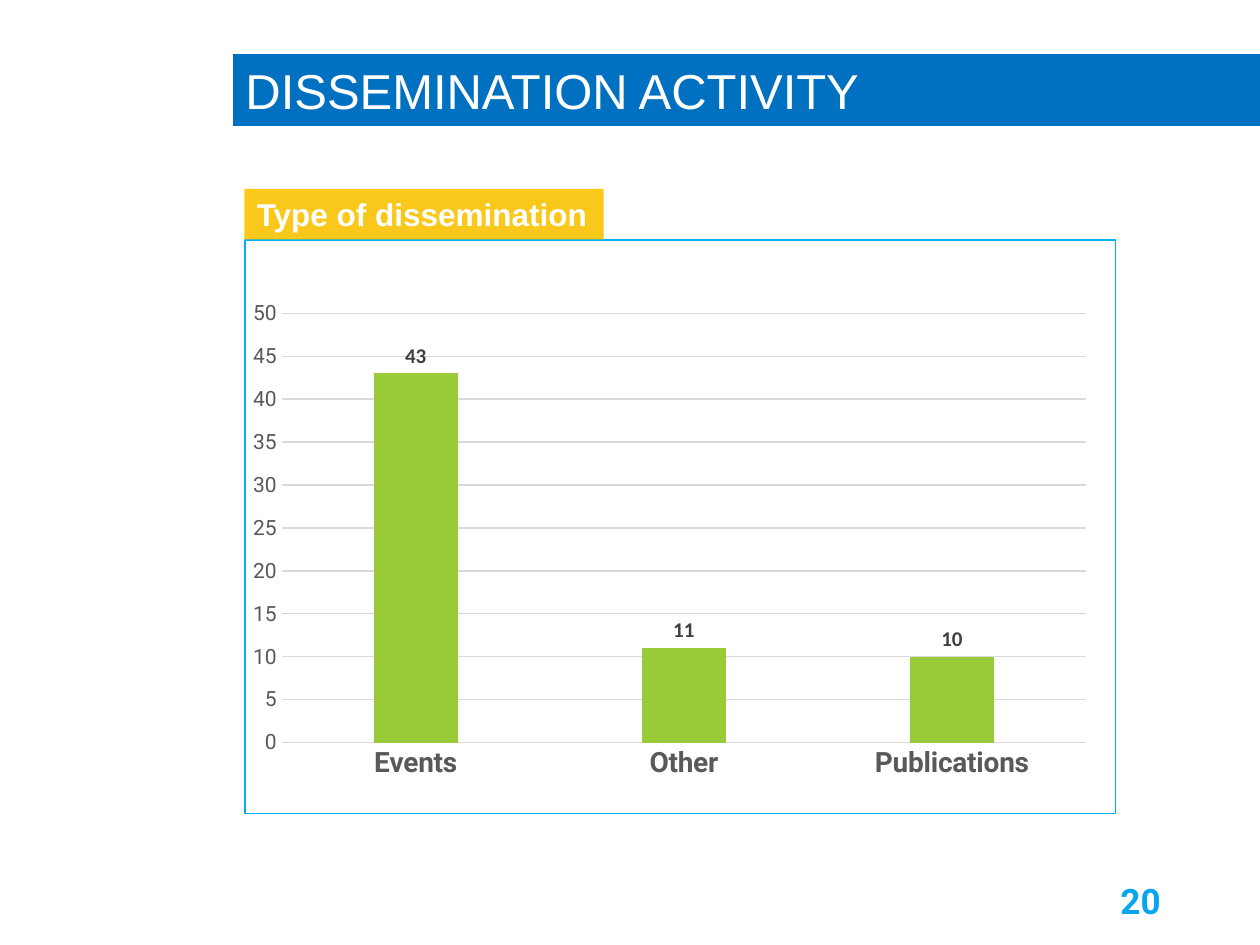
from dataclasses import dataclass

from pptx import Presentation
from pptx.chart.data import CategoryChartData
from pptx.dml.color import RGBColor
from pptx.enum.chart import XL_CHART_TYPE, XL_LABEL_POSITION, XL_TICK_MARK
from pptx.enum.shapes import MSO_SHAPE
from pptx.enum.text import MSO_ANCHOR, PP_ALIGN
from pptx.oxml import parse_xml
from pptx.oxml.ns import nsdecls
from pptx.util import Inches, Pt

COLUMNS = XL_CHART_TYPE.COLUMN_CLUSTERED
OUTSIDE_END = XL_LABEL_POSITION.OUTSIDE_END
NO_TICK = XL_TICK_MARK.NONE
RECTANGLE = MSO_SHAPE.RECTANGLE
TOP, MIDDLE = MSO_ANCHOR.TOP, MSO_ANCHOR.MIDDLE
LEFT, RIGHT = PP_ALIGN.LEFT, PP_ALIGN.RIGHT

SLIDE_WIDTH, SLIDE_HEIGHT = Inches(10), Inches(7.5)
GRID_COLUMNS, GRID_ROWS = 100, 75

COLORS = {
    "title": "0070C0",
    "heading": "FAC81A",
    "white": "FFFFFF",
    "number": "08A5EF",
    "bar": "99CB38",
    "axis": "595959",
    "label": "404040",
    "grid": "D9D9D9",
    "border": "00B0F0",
}


@dataclass(frozen=True)
class Area:
    column: float
    row: float
    columns: float
    rows: float

    def lengths(self) -> tuple[int, int, int, int]:
        cell_width = SLIDE_WIDTH / GRID_COLUMNS
        cell_height = SLIDE_HEIGHT / GRID_ROWS
        return (
            round(self.column * cell_width),
            round(self.row * cell_height),
            round(self.columns * cell_width),
            round(self.rows * cell_height),
        )


@dataclass(frozen=True)
class TextStyle:
    font: str
    size: float
    color: str
    bold: bool = False


@dataclass(frozen=True)
class Label:
    text: str
    area: Area
    style: TextStyle
    fill: str | None = None
    align: PP_ALIGN = LEFT
    anchor: MSO_ANCHOR = TOP
    wrap: bool = True


LABELS = [
    Label("DISSEMINATION ACTIVITY", Area(18.5, 4.3, 83.6, 5.7),
          TextStyle("Arial", 28, "white"), fill="title"),
    Label("Type of dissemination", Area(19.4, 15, 28.5, 4),
          TextStyle("Arial", 18, "white", True), fill="heading", wrap=False),
    Label("20", Area(70.6, 69.5, 22.5, 4),
          TextStyle("Roboto", 20, "number", True), align=RIGHT, anchor=MIDDLE),
]

CHART_AREA = Area(19.4, 19, 69.2, 45.6)
PLOT_SHARES = {"x": 0.042, "y": 0.128, "w": 0.924, "h": 0.749}
ACTIVITIES = {"Events": 43, "Other": 11, "Publications": 10}


def color(name: str) -> RGBColor:
    return RGBColor.from_string(COLORS[name])


def apply_style(font, style: TextStyle) -> None:
    font.name = style.font
    font.size = Pt(style.size)
    font.bold = style.bold
    font.color.rgb = color(style.color)


def add_label(page, label: Label) -> None:
    if label.fill:
        box = page.shapes.add_shape(RECTANGLE, *label.area.lengths())
        box.shadow.inherit = False
        box.fill.solid()
        box.fill.fore_color.rgb = color(label.fill)
        box.line.fill.background()
    else:
        box = page.shapes.add_textbox(*label.area.lengths())
    frame = box.text_frame
    frame.text = label.text
    frame.word_wrap = label.wrap
    frame.vertical_anchor = label.anchor
    para = frame.paragraphs[0]
    para.alignment = label.align
    apply_style(para.runs[0].font, label.style)


def set_line(line, name: str) -> None:
    line.color.rgb = color(name)
    line.width = Pt(0.75)


def set_plot_layout(chart) -> None:
    plot_area = chart.plots[0]._element.getparent()
    for layout in plot_area.findall(f"{{{plot_area.nsmap['c']}}}layout"):
        plot_area.remove(layout)
    modes = "".join(f'<c:{axis}Mode val="edge"/>' for axis in "xy")
    shares = "".join(f'<c:{key} val="{share}"/>' for key, share in PLOT_SHARES.items())
    plot_area.insert(0, parse_xml(
        f'<c:layout {nsdecls("c")}><c:manualLayout><c:layoutTarget val="inner"/>'
        f"{modes}{shares}</c:manualLayout></c:layout>"))


def set_chart_border(chart) -> None:
    space = chart._chartSpace
    frame = parse_xml(
        f'<c:spPr {nsdecls("c", "a")}><a:noFill/><a:ln w="{Pt(0.75)}"><a:solidFill>'
        f'<a:srgbClr val="{COLORS["border"]}"/></a:solidFill></a:ln></c:spPr>')
    space.find(f"{{{space.nsmap['c']}}}chart").addnext(frame)


def add_activity_chart(page) -> None:
    data = CategoryChartData()
    data.categories = list(ACTIVITIES)
    data.add_series("Series 1", list(ACTIVITIES.values()))
    chart = page.shapes.add_chart(COLUMNS, *CHART_AREA.lengths(), data).chart
    chart.has_title = False
    chart.has_legend = False
    chart.font.name = "Roboto"
    chart.font.size = Pt(10)

    plot = chart.plots[0]
    plot.gap_width = 219
    plot.overlap = -27
    plot.vary_by_categories = False
    bars = plot.series[0]
    bars.format.fill.solid()
    bars.format.fill.fore_color.rgb = color("bar")
    labels = bars.data_labels
    labels.show_value = True
    labels.position = OUTSIDE_END
    apply_style(labels.font, TextStyle("Calibri", 12, "label", True))

    names, values = chart.category_axis, chart.value_axis
    for axis, size, bold in ((names, 16, True), (values, 12, False)):
        axis.major_tick_mark = NO_TICK
        axis.minor_tick_mark = NO_TICK
        apply_style(axis.tick_labels.font, TextStyle("Roboto", size, "axis", bold))
    set_line(names.format.line, "grid")
    values.format.line.fill.background()
    values.minimum_scale, values.maximum_scale, values.major_unit = 0, 50, 5
    set_line(values.major_gridlines.format.line, "grid")
    set_plot_layout(chart)
    set_chart_border(chart)


def main() -> None:
    deck = Presentation()
    deck.slide_width, deck.slide_height = SLIDE_WIDTH, SLIDE_HEIGHT
    page = deck.slides.add_slide(deck.slide_layouts[6])
    add_activity_chart(page)
    for label in LABELS:
        add_label(page, label)
    deck.save("out.pptx")


if __name__ == "__main__":
    main()
